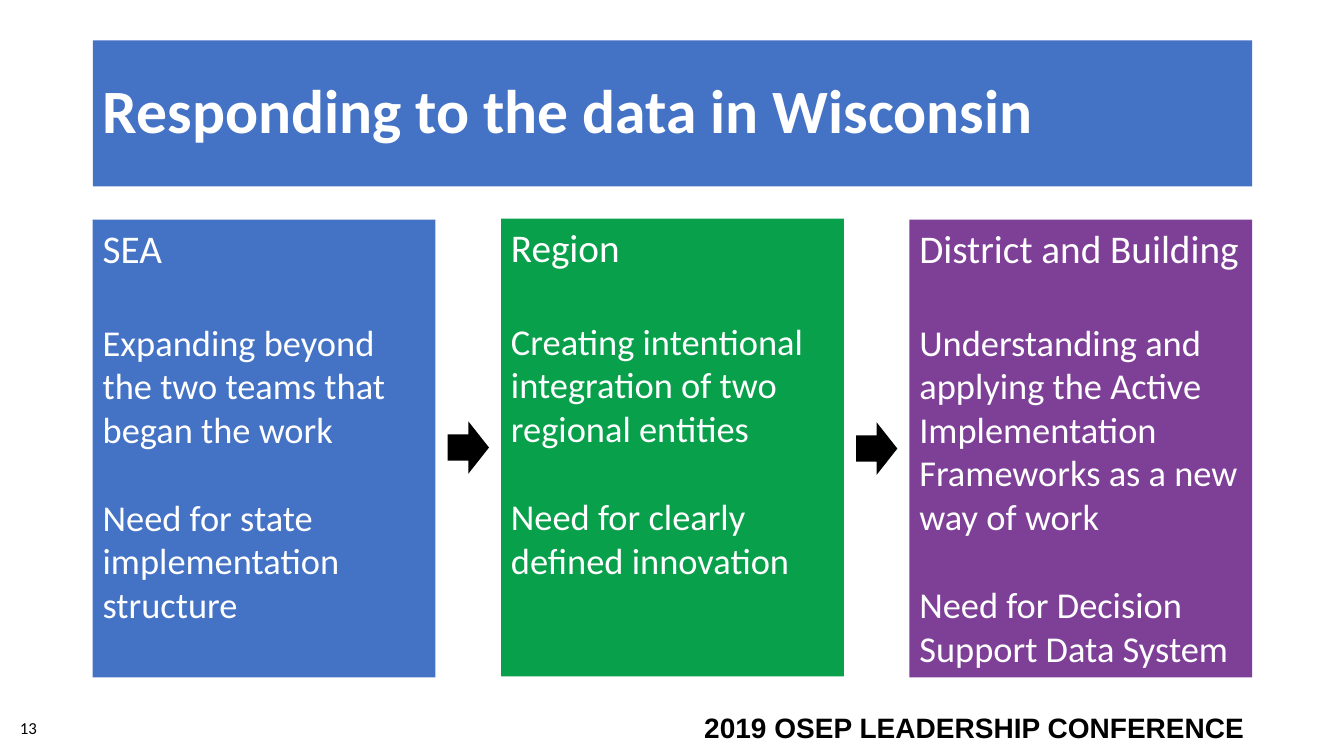
from pptx import Presentation
from pptx.dml.color import RGBColor
from pptx.enum.shapes import MSO_SHAPE
from pptx.enum.text import MSO_ANCHOR, MSO_AUTO_SIZE, PP_ALIGN
from pptx.util import Inches, Pt

RECTANGLE = MSO_SHAPE.RECTANGLE
RIGHT_ARROW = MSO_SHAPE.RIGHT_ARROW
TOP, MIDDLE = MSO_ANCHOR.TOP, MSO_ANCHOR.MIDDLE
LEFT, RIGHT = PP_ALIGN.LEFT, PP_ALIGN.RIGHT
FIXED_SIZE = MSO_AUTO_SIZE.NONE
TITLE_ONLY = 5

COLORS = {
    "title": "4472C4",
    "sea": "4472C5",
    "region": "09A04B",
    "district": "7E3F97",
    "white": "FFFFFF",
    "black": "000000",
}

MARGIN = 0.92
CONTENT_WIDTH = 11.5
COLUMN_WIDTH, COLUMN_HEIGHT = 3.4, 4.54
COLUMN_STEP = (CONTENT_WIDTH - COLUMN_WIDTH) / 2
ARROW_WIDTH, ARROW_HEIGHT = 0.41, 0.52

LEVELS = [
    ("sea", 2.18, "SEA",
     "Expanding beyond the two teams that began the work",
     "Need for state implementation structure"),
    ("region", 2.17, "Region",
     "Creating intentional integration of two regional entities",
     "Need for clearly defined innovation"),
    ("district", 2.18, "District and Building",
     "Understanding and applying the Active Implementation Frameworks as a new way of work",
     "Need for Decision Support Data System"),
]
ARROW_TOPS = [4.18, 4.19]


def fill_shape(shape, color):
    shape.fill.solid()
    shape.fill.fore_color.rgb = RGBColor.from_string(COLORS[color])


def write_paragraph(paragraph, text, size, color="white", font="Calibri",
                    bold=False, align=LEFT, space_before=0, line_spacing=1.0):
    paragraph.alignment = align
    paragraph.space_before = Pt(space_before)
    paragraph.line_spacing = line_spacing
    run = paragraph.add_run()
    run.text = text
    run.font.name = font
    run.font.size = Pt(size)
    run.font.bold = bold
    run.font.color.rgb = RGBColor.from_string(COLORS[color])


def prepare_frame(shape, anchor):
    frame = shape.text_frame
    frame.word_wrap = True
    frame.auto_size = FIXED_SIZE
    frame.vertical_anchor = anchor
    return frame


def add_plain_shape(slide, kind, box, color):
    shape = slide.shapes.add_shape(kind, *map(Inches, box))
    shape.shadow.inherit = False
    fill_shape(shape, color)
    shape.line.fill.background()
    return shape


def add_title(slide, box, text):
    title = slide.shapes.title
    title.left, title.top, title.width, title.height = map(Inches, box)
    fill_shape(title, "title")
    frame = prepare_frame(title, MIDDLE)
    write_paragraph(frame.paragraphs[0], text, 44, bold=True, line_spacing=0.9)


def add_column(slide, box, color, heading, action, need):
    column = add_plain_shape(slide, RECTANGLE, box, color)
    frame = prepare_frame(column, TOP)
    write_paragraph(frame.paragraphs[0], heading, 28)
    write_paragraph(frame.add_paragraph(), action, 26, space_before=34.2)
    write_paragraph(frame.add_paragraph(), need, 26, space_before=31.7)


def add_process(slide, left):
    for index, (color, top, *texts) in enumerate(LEVELS):
        box = (left + index * COLUMN_STEP, top, COLUMN_WIDTH, COLUMN_HEIGHT)
        add_column(slide, box, color, *texts)
    gap = COLUMN_STEP - COLUMN_WIDTH
    for index, top in enumerate(ARROW_TOPS):
        arrow_left = left + index * COLUMN_STEP + COLUMN_WIDTH + (gap - ARROW_WIDTH) / 2
        add_plain_shape(slide, RIGHT_ARROW,
                        (arrow_left, top, ARROW_WIDTH, ARROW_HEIGHT), "black")


def add_label(slide, box, text, anchor, **text_format):
    label = slide.shapes.add_textbox(*map(Inches, box))
    frame = prepare_frame(label, anchor)
    write_paragraph(frame.paragraphs[0], text, color="black", **text_format)


def main():
    presentation = Presentation()
    presentation.slide_width = Inches(13.33)
    presentation.slide_height = Inches(7.5)
    slide = presentation.slides.add_slide(presentation.slide_layouts[TITLE_ONLY])
    add_title(slide, (MARGIN, 0.4, CONTENT_WIDTH, 1.45),
              "Responding to the data in Wisconsin")
    add_process(slide, MARGIN)
    add_label(slide, (0.1, 7.02, 3, 0.4), "13", MIDDLE, size=12)
    add_label(slide, (6.67, 7, 5.77, 0.44), "2019 OSEP LEADERSHIP CONFERENCE", TOP,
              size=20, font="Arial", bold=True, align=RIGHT)
    presentation.save("out.pptx")


if __name__ == "__main__":
    main()
